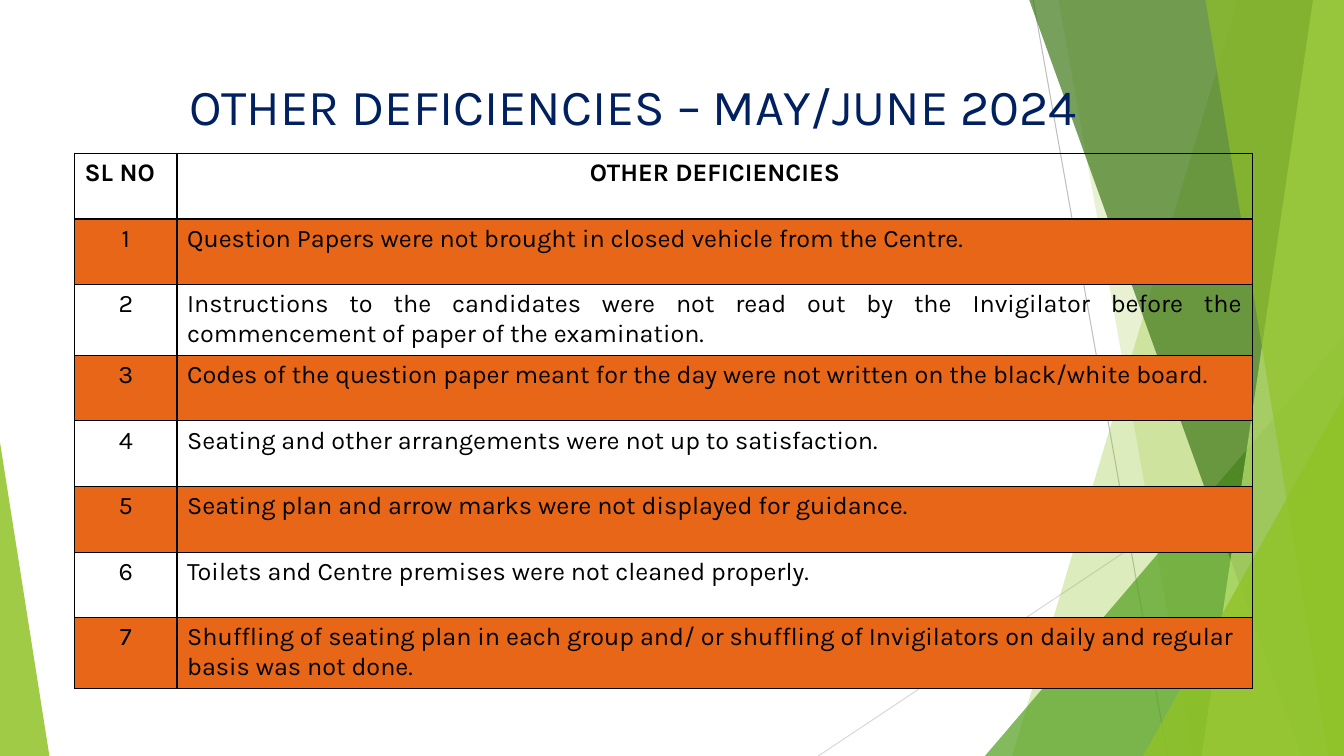
import pptx
import pptx.util
import pptx.dml.color
import pptx.enum.shapes
import pptx.enum.text
import pptx.oxml
import pptx.oxml.ns
from lxml import etree

Pt = pptx.util.Pt
RGB = pptx.dml.color.RGBColor.from_string
ALIGN = pptx.enum.text.PP_ALIGN
A = pptx.oxml.ns.nsdecls("a")

THEME = {
    "font": "Karla", "title_size": 36, "table_size": 18,
    "title": "002060", "text": "000000", "band": "E76618", "border": "000000",
    "green": "90C226", "mid": "54A021", "dark": "3F7819", "light": "C0E474",
    "line": "BFBFBF", "pale_line": "D9D9D9",
}
WIDTH, HEIGHT = 960, 540


def fill_solid(fill, color, opacity):
    fill.solid()
    fill.fore_color.rgb = RGB(THEME[color])
    srgb = fill._xPr.find(".//" + pptx.oxml.ns.qn("a:srgbClr"))
    etree.SubElement(srgb, pptx.oxml.ns.qn("a:alpha"), val=str(opacity * 1000))


def write(tf, text, size, color, align, bold=False):
    tf.text = text
    p = tf.paragraphs[0]
    p.alignment = align
    r = p.runs[0]
    r.font.name = THEME["font"]
    r.font.size = Pt(THEME[size])
    r.font.color.rgb = RGB(THEME[color])
    r.font.bold = bold


prs = pptx.Presentation()
prs.slide_width, prs.slide_height = Pt(WIDTH), Pt(HEIGHT)
s = prs.slides.add_slide(prs.slide_layouts[6])

# Thin lines behind the facets
for x1, y1, x2, y2, color in [(738, 0, 834, HEIGHT, "line"),
                              (WIDTH, 290, 584.5, HEIGHT, "pale_line")]:
    line = s.shapes.add_connector(pptx.enum.shapes.MSO_CONNECTOR.STRAIGHT,
                                  Pt(x1), Pt(y1), Pt(x2), Pt(y2))
    line.line.color.rgb = RGB(THEME[color])
    line.line.width = Pt(0.75)
    line._element.spPr.append(pptx.oxml.parse_xml(f"<a:effectLst {A}/>"))

# Green facets: a band has its left edge at top and bottom and runs to the
# right side; a triangle has left, top, width and apex, and stands on the base
facets = [
    ("band", (884.2, 723), "green", 30),
    ("band", (756, 852), "green", 20),
    ("triangle", (703.5, 240, 256.5, 1), "mid", 72),
    ("band", (735, 929.5), "dark", 70),
    ("band", (938, 858.3), "light", 70),
    ("band", (861, 949), "green", 65),
    ("triangle", (816.5, 283, 143.5, 1), "green", 80),
    ("triangle", (0, 316, 35.3, 0), "green", 85),
]
for kind, geometry, color, opacity in facets:
    if kind == "band":
        top_x, base_x = geometry
        outline = s.shapes.build_freeform(Pt(top_x), Pt(-0.6))
        outline.add_line_segments([(Pt(WIDTH), Pt(-0.6)), (Pt(WIDTH), Pt(HEIGHT)),
                                   (Pt(base_x), Pt(HEIGHT))])
        sp = outline.convert_to_shape()
    else:
        left, top, width, apex = geometry
        sp = s.shapes.add_shape(pptx.enum.shapes.MSO_SHAPE.ISOSCELES_TRIANGLE,
                                Pt(left), Pt(top), Pt(width), Pt(HEIGHT - top))
        sp.adjustments[0] = apex
    sp.shadow.inherit = False
    sp.line.fill.background()
    fill_solid(sp.fill, color, opacity)

# Title
tf = s.shapes.add_textbox(Pt(53.3), Pt(48.2), Pt(798), Pt(54)).text_frame
tf.word_wrap = True
tf.vertical_anchor = pptx.enum.text.MSO_ANCHOR.MIDDLE
write(tf, "OTHER DEFICIENCIES – MAY/JUNE 2024", "title_size", "title", ALIGN.CENTER)

# Table
deficiencies = [
    "Question Papers were not brought in closed vehicle from the Centre.",
    "Instructions to the candidates were not read out by the Invigilator before "
    "the commencement of paper of the examination.",
    "Codes of the question paper meant for the day were not written on the "
    "black/white board.",
    "Seating and other arrangements were not up to satisfaction.",
    "Seating plan and arrow marks were not displayed for guidance.",
    "Toilets and Centre premises were not cleaned properly.",
    "Shuffling of seating plan in each group and/ or shuffling of Invigilators "
    "on daily and regular basis was not done.",
]
rows = [("SL NO", "OTHER DEFICIENCIES")]
rows += [(str(n), text) for n, text in enumerate(deficiencies, 1)]
col_widths, row_height = (73.2, 768.3), 46.9
table = s.shapes.add_table(len(rows), 2, Pt(53.3), Pt(109.5), Pt(sum(col_widths)),
                           Pt(row_height * len(rows))).table
table.first_row = table.horz_banding = False
for col, width in zip(table.columns, col_widths):
    col.width = Pt(width)

for i, row in enumerate(rows):
    table.rows[i].height = Pt(row_height)
    for j, text in enumerate(row):
        cell = table.cell(i, j)
        if i == 0:
            align = (ALIGN.LEFT, ALIGN.CENTER)[j]
        elif j == 0:
            align = ALIGN.CENTER
        else:
            align = ALIGN.JUSTIFY if i == 2 else ALIGN.LEFT
        write(cell.text_frame, text, "table_size", "text", align, bold=i == 0)
        tcPr = cell._tc.get_or_add_tcPr()
        for side in "LRTB":
            tcPr.append(pptx.oxml.parse_xml(
                f'<a:ln{side} {A} w="{Pt(1)}"><a:solidFill>'
                f'<a:srgbClr val="{THEME["border"]}"/></a:solidFill></a:ln{side}>'))
        if i % 2:
            fill_solid(cell.fill, "band", 20)
        else:
            cell.fill.background()

prs.save("out.pptx")
